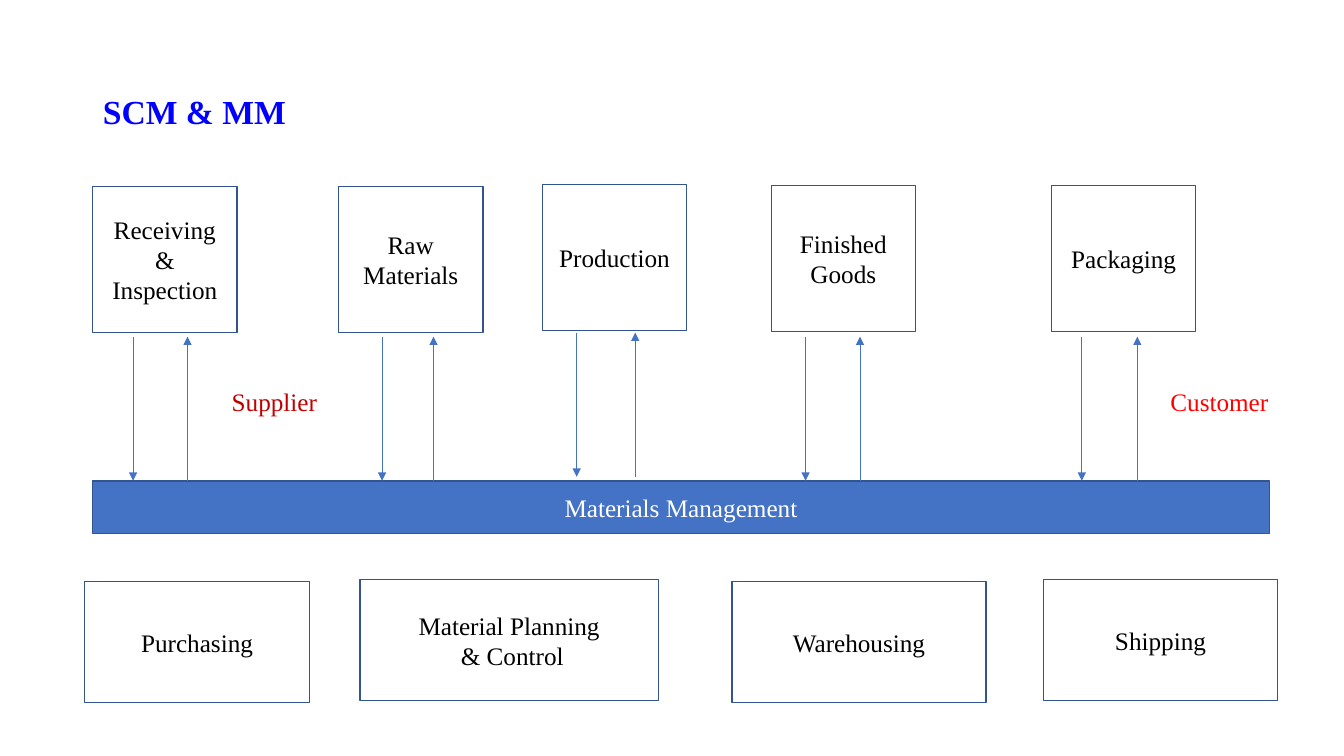
import pptx
import pptx.util
import pptx.dml.color
import pptx.enum.shapes
import pptx.enum.text
import pptx.oxml
import pptx.oxml.ns

Inches = pptx.util.Inches
FONT = "Times New Roman"
BLUE, NAVY = "4472C4", "325491"
STAGE_W, STAGE_H = 1.43, 1.45
STAGES = [
    (0.92, 1.85, "Receiving\n& Inspection", 0.40, 0.94, 3.34),
    (3.36, 1.85, "Raw\nMaterials", 0.43, 0.94, 3.34),
    (5.38, 1.83, "Production", 0.34, 0.92, 3.30),
    (7.65, 1.84, "Finished Goods", 0.34, 0.88, 3.34),
    (10.43, 1.84, "Packaging", 0.30, 0.85, 3.34),
]
ARROW_LENGTH = 1.43
FUNCTIONS = [
    (0.84, 5.77, 2.23, "Purchasing"),
    (3.57, 5.75, 2.96, "Material Planning\n & Control"),
    (7.26, 5.77, 2.52, "Warehousing"),
    (10.35, 5.75, 2.32, "Shipping"),
]
FUNCTION_H = 1.2


def rgb(value):
    return pptx.dml.color.RGBColor.from_string(value)


def write(tf, text, color, align, size=18, bold=False):
    tf.text = text
    tf.word_wrap = True
    for p in tf.paragraphs:
        p.alignment = align
        for r in p.runs:
            r.font.name = FONT
            r.font.size = pptx.util.Pt(size)
            r.font.bold = bold
            r.font.color.rgb = rgb(color)


def add_title(s, x, y, w, h, text):
    sp = s.shapes.title
    sp.left, sp.top, sp.width, sp.height = map(Inches, (x, y, w, h))
    tf = sp.text_frame
    write(tf, text, "0000FF", pptx.enum.text.PP_ALIGN.LEFT, 24, True)
    tf.vertical_anchor = pptx.enum.text.MSO_ANCHOR.MIDDLE
    tf.paragraphs[0].line_spacing = 0.9


def add_box(s, x, y, w, h, text, fill="FFFFFF", color="000000"):
    sp = s.shapes.add_shape(pptx.enum.shapes.MSO_SHAPE.RECTANGLE,
                            *map(Inches, (x, y, w, h)))
    sp.shadow.inherit = False
    sp.fill.solid()
    sp.fill.fore_color.rgb = rgb(fill)
    sp.line.color.rgb = rgb(NAVY)
    sp.line.width = pptx.util.Pt(1)
    write(sp.text_frame, text, color, pptx.enum.text.PP_ALIGN.CENTER)
    sp.text_frame.vertical_anchor = pptx.enum.text.MSO_ANCHOR.MIDDLE


def add_arrow(s, x, start, end):
    line = s.shapes.add_connector(pptx.enum.shapes.MSO_CONNECTOR.STRAIGHT,
                                  *map(Inches, (x, start, x, end)))
    line.line.color.rgb = rgb(BLUE)
    line.line.width = pptx.util.Pt(0.5)
    ns = pptx.oxml.ns.nsdecls("a")
    line.line._get_or_add_ln().append(
        pptx.oxml.parse_xml(f'<a:tailEnd {ns} type="triangle"/>'))
    line._element.spPr.append(pptx.oxml.parse_xml(f"<a:effectLst {ns}/>"))


def add_stage(s, x, y, text, down, up, arrow_top):
    add_box(s, x, y, STAGE_W, STAGE_H, text)
    arrow_bottom = arrow_top + ARROW_LENGTH
    add_arrow(s, x + down, arrow_top, arrow_bottom)
    add_arrow(s, x + up, arrow_bottom, arrow_top)


def add_label(s, x, y, w, h, text, color):
    sp = s.shapes.add_textbox(*map(Inches, (x, y, w, h)))
    write(sp.text_frame, text, color, pptx.enum.text.PP_ALIGN.LEFT)


def main():
    prs = pptx.Presentation()
    prs.slide_width, prs.slide_height = Inches(13.33), Inches(7.5)
    s = prs.slides.add_slide(prs.slide_layouts[5])
    add_title(s, 0.92, 0.4, 11.5, 1.45, "SCM & MM")
    for x, y, w, text in FUNCTIONS:
        add_box(s, x, y, w, FUNCTION_H, text)
    add_box(s, 0.92, 4.77, 11.67, 0.52, "Materials Management", BLUE, "FFFFFF")
    for stage in STAGES:
        add_stage(s, *stage)
    add_label(s, 2.2, 3.78, 1.74, 0.4, "Supplier", "C00000")
    add_label(s, 11.51, 3.78, 1.6, 0.4, "Customer", "FF0000")
    prs.save("out.pptx")


if __name__ == "__main__":
    main()
